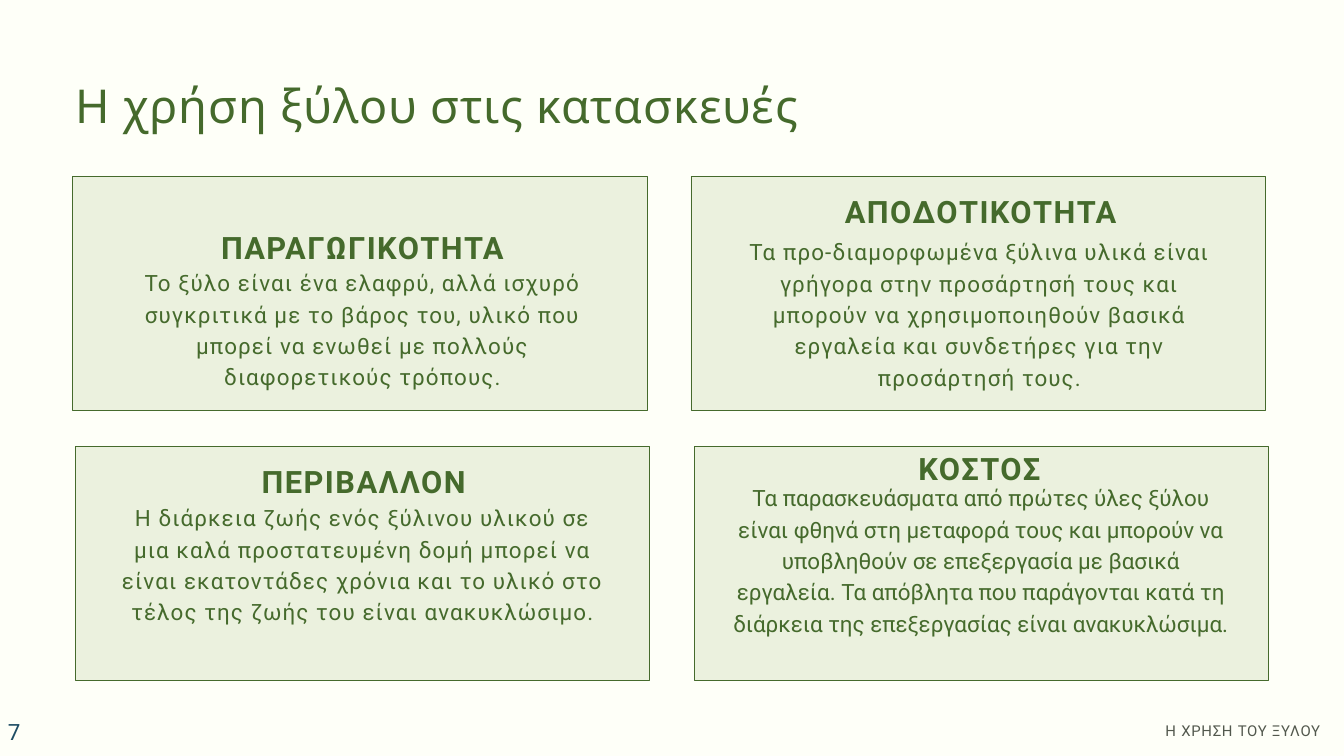
from pptx import Presentation
from pptx.dml.color import RGBColor
from pptx.enum.shapes import MSO_SHAPE
from pptx.enum.text import MSO_ANCHOR, MSO_AUTO_SIZE, PP_ALIGN
from pptx.util import Pt

CREAM = RGBColor(0xFE, 0xFF, 0xF8)
PALE_GREEN = RGBColor(0xEB, 0xF1, 0xDE)
GREEN = RGBColor(0x45, 0x6A, 0x2C)
GREY = RGBColor(0x52, 0x58, 0x4D)
BLUE = RGBColor(0x1E, 0x4D, 0x65)

CARD_WIDTH, CARD_HEIGHT = 615.6, 250.6
TEXT_WIDTH = 532.1
HEADING_HEIGHT = 41


def write(box, text, size, color, tracking, leading=None, align=PP_ALIGN.LEFT,
          font_name="Roboto", bold=False, inset=0):
    """Fill a box with one paragraph; tracking and leading are in points."""
    frame = box.text_frame
    frame.word_wrap = True
    frame.auto_size = MSO_AUTO_SIZE.NONE
    frame.vertical_anchor = MSO_ANCHOR.TOP
    frame.margin_left = frame.margin_right = Pt(inset)
    frame.margin_top = frame.margin_bottom = Pt(inset / 2)
    frame.text = text
    paragraph = frame.paragraphs[0]
    paragraph.alignment = align
    if leading:
        paragraph.line_spacing = Pt(leading)
    font = paragraph.font
    font.name, font.size, font.bold = font_name, Pt(size), bold
    font.color.rgb = color
    font._element.set("spc", str(round(tracking * 100)))


presentation = Presentation()
presentation.slide_width, presentation.slide_height = Pt(1440), Pt(810)
slide = presentation.slides.add_slide(presentation.slide_layouts[5])
slide.background.fill.solid()
slide.background.fill.fore_color.rgb = CREAM

title = slide.shapes.title
title.left, title.top, title.width, title.height = Pt(80.6), Pt(75.6), Pt(1275), Pt(67.7)
write(title, "Η χρήση ξύλου στις κατασκευές", 50, GREEN, 1, 66.8,
      font_name="League Spartan")

# Card corner, heading corner, body corner, body tracking, heading, body
cards = [
    ((80.6, 478), (123.8, 494.6), (122.4, 535.7), 1.2, "ΠΕΡΙΒΑΛΛΟΝ",
     "Η διάρκεια ζωής ενός ξύλινου υλικού σε μια καλά προστατευμένη δομή μπορεί "
     "να είναι εκατοντάδες χρόνια και το υλικό στο τέλος της ζωής του είναι "
     "ανακυκλώσιμο."),
    ((77.8, 188.6), (122.4, 243.4), (122.4, 283.7), 1.2, "ΠΑΡΑΓΩΓΙΚΟΤΗΤΑ",
     "Το ξύλο είναι ένα ελαφρύ, αλλά ισχυρό συγκριτικά με το βάρος του, υλικό "
     "που μπορεί να ενωθεί με πολλούς διαφορετικούς τρόπους."),
    ((740.2, 188.6), (784.8, 204.5), (783.4, 250.6), 1.2, "ΑΠΟΔΟΤΙΚΟΤΗΤΑ",
     "Τα προ-διαμορφωμένα ξύλινα υλικά είναι γρήγορα στην προσάρτησή τους και "
     "μπορούν να χρησιμοποιηθούν βασικά εργαλεία και συνδετήρες για την "
     "προσάρτησή τους."),
    ((743.8, 478), (783.4, 480.2), (784.8, 514.1), 0, "ΚΟΣΤΟΣ",
     "Τα παρασκευάσματα από πρώτες ύλες ξύλου είναι φθηνά στη μεταφορά τους και "
     "μπορούν να υποβληθούν σε επεξεργασία με βασικά εργαλεία. Τα απόβλητα που "
     "παράγονται κατά τη διάρκεια της επεξεργασίας είναι ανακυκλώσιμα."),
]
for (left, top), heading_at, body_at, tracking, heading_text, body_text in cards:
    card = slide.shapes.add_shape(MSO_SHAPE.RECTANGLE, Pt(left), Pt(top),
                                  Pt(CARD_WIDTH), Pt(CARD_HEIGHT))
    card.shadow.inherit = False
    card.fill.solid()
    card.fill.fore_color.rgb = PALE_GREEN
    card.line.color.rgb = GREEN
    card.line.width = Pt(0.75)

    texts = slide.shapes.add_group_shape().shapes
    heading = texts.add_textbox(Pt(heading_at[0]), Pt(heading_at[1]),
                                Pt(TEXT_WIDTH), Pt(HEADING_HEIGHT))
    write(heading, heading_text, 33, GREEN, 1.6, 41.2, PP_ALIGN.CENTER, bold=True)
    body_height = top + CARD_HEIGHT - body_at[1] - 15
    body = texts.add_textbox(Pt(body_at[0]), Pt(body_at[1]),
                             Pt(TEXT_WIDTH), Pt(body_height))
    write(body, body_text, 24, GREEN, tracking, 33.6, PP_ALIGN.CENTER)

footer = slide.shapes.add_textbox(Pt(815.8), Pt(770.4), Pt(599), Pt(21.6))
write(footer, "Η ΧΡΗΣΗ ΤΟΥ ΞΥΛΟΥ", 16, GREY, 0.8, 22.4, PP_ALIGN.RIGHT)

page_number = slide.shapes.add_textbox(Pt(1.4), Pt(769.7), Pt(167.8), Pt(28.8))
write(page_number, "7", 24, BLUE, 1.2, inset=7.2)
page_number.text_frame.vertical_anchor = MSO_ANCHOR.MIDDLE

presentation.save("out.pptx")
